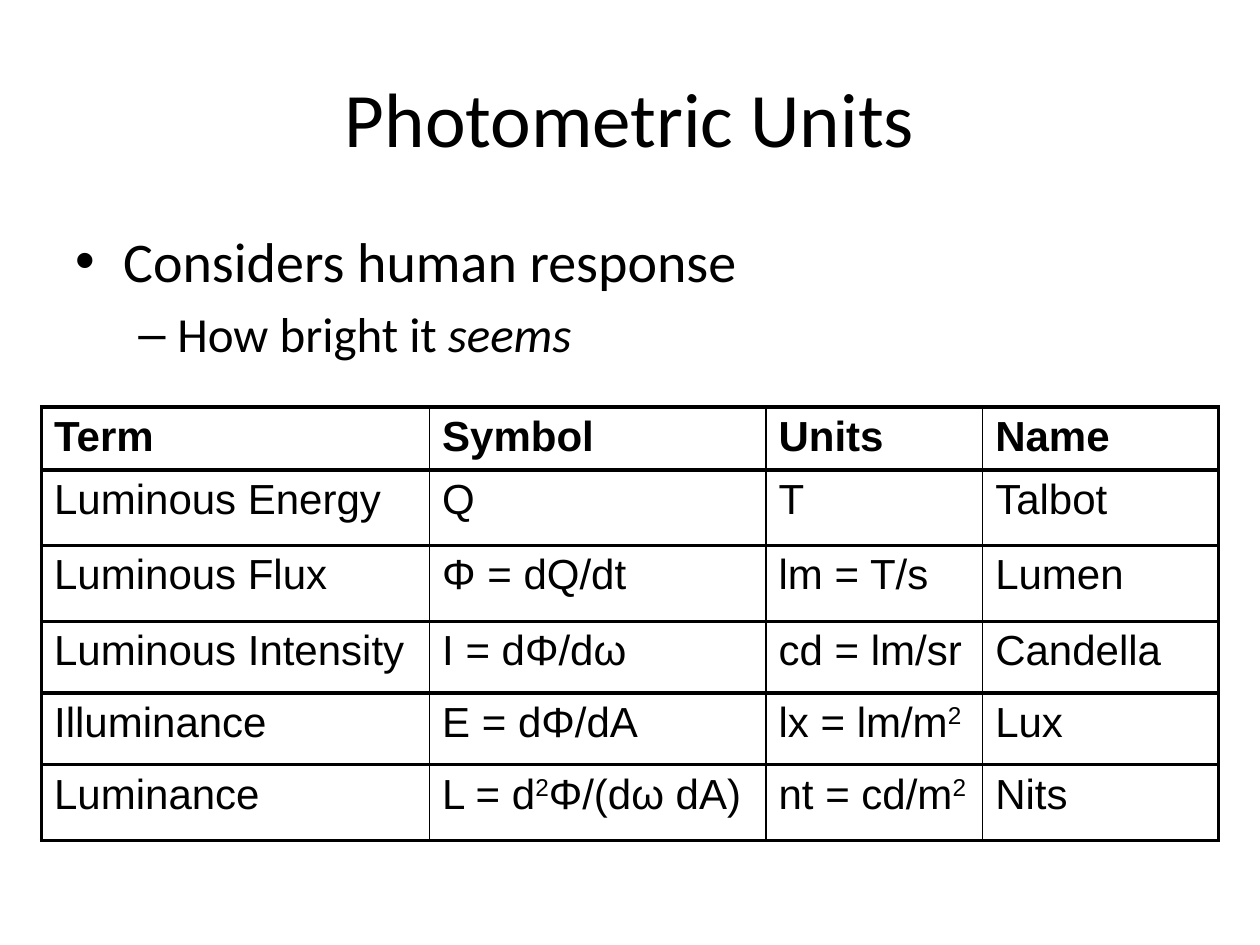
from lxml import etree
from pptx import Presentation
from pptx.dml.color import RGBColor
from pptx.enum.text import MSO_ANCHOR, PP_ALIGN
from pptx.oxml.ns import qn
from pptx.util import Inches, Pt

CENTER, MIDDLE = PP_ALIGN.CENTER, MSO_ANCHOR.MIDDLE
TITLE_ONLY = 5

# Content: *text* is italic, ^text^ is superscript
TITLE = "Photometric Units"
BULLETS = [(0, "Considers human response"), (1, "How bright it *seems*")]
UNITS = [
    ("Term", "Symbol", "Units", "Name"),
    ("Luminous Energy", "Q", "T", "Talbot"),
    ("Luminous Flux", "Φ = dQ/dt", "lm = T/s", "Lumen"),
    ("Luminous Intensity", "I = dΦ/dω", "cd = lm/sr", "Candella"),
    ("Illuminance", "E = dΦ/dA", "lx = lm/m^2^", "Lux"),
    ("Luminance", "L = d^2^Φ/(dω dA)", "nt = cd/m^2^", "Nits"),
]
COLUMN_WIDTHS = [3.08, 2.67, 1.72, 1.87]
ROW_HEIGHTS = [0.5, 0.6, 0.6, 0.57, 0.57, 0.6]

THEME = {
    "ink": "000000", "heading": "Calibri", "table": "Arial",
    "title_size": 44, "table_size": 24, "thick": 2.25, "thin": 1,
}
# Per bullet level: mark, type size, left margin, hanging indent
LEVELS = [("•", 32, 0.38, -0.38), ("–", 28, 0.81, -0.31)]


def add_runs(para, text, font_name, size, bold=False):
    """Add runs, switching style at each * or ^ mark."""
    mark = "*" if "*" in text else "^"
    for index, part in enumerate(text.split(mark)):
        if not part:
            continue
        span = para.add_run()
        span.text = part
        font = span.font
        font.name, font.size, font.bold = font_name, Pt(size), bold
        font.color.rgb = RGBColor.from_string(THEME["ink"])
        if index % 2 and mark == "*":
            font.italic = True
        elif index % 2:
            span._r.get_or_add_rPr().set("baseline", "30000")


def set_bullet(para, mark, left, indent):
    properties = para._p.get_or_add_pPr()
    properties.set("marL", str(Inches(left)))
    properties.set("indent", str(Inches(indent)))
    etree.SubElement(properties, qn("a:buFont"), typeface="Arial")
    etree.SubElement(properties, qn("a:buChar"), char=mark)


def set_borders(cell, widths):
    properties = cell._tc.get_or_add_tcPr()
    for side, width in widths.items():
        line = etree.SubElement(properties, qn(f"a:ln{side}"), w=str(Pt(width)))
        fill = etree.SubElement(line, qn("a:solidFill"))
        etree.SubElement(fill, qn("a:srgbClr"), val=THEME["ink"])


def add_title(page):
    title = page.shapes.title
    title.left, title.top = Inches(0.5), Inches(0.3)
    title.width, title.height = Inches(9), Inches(1.25)
    frame = title.text_frame
    frame.vertical_anchor = MIDDLE
    para = frame.paragraphs[0]
    para.alignment = CENTER
    add_runs(para, TITLE, THEME["heading"], THEME["title_size"])


def add_bullets(page):
    box = page.shapes.add_textbox(Inches(0.5), Inches(1.75), Inches(9), Inches(1.4))
    frame = box.text_frame
    frame.word_wrap = True
    for index, (level, text) in enumerate(BULLETS):
        mark, size, left, indent = LEVELS[level]
        para = frame.add_paragraph() if index else frame.paragraphs[0]
        para.level = level
        if index:
            para.space_before = Pt(size * 0.2)
        set_bullet(para, mark, left, indent)
        add_runs(para, text, THEME["heading"], size)


def add_units_table(page):
    table = page.shapes.add_table(
        len(UNITS), len(COLUMN_WIDTHS), Inches(0.33), Inches(3.23),
        Inches(sum(COLUMN_WIDTHS)), Inches(sum(ROW_HEIGHTS))).table
    table.first_row = table.horz_banding = False
    for column, width in zip(table.columns, COLUMN_WIDTHS):
        column.width = Inches(width)
    for row, height in zip(table.rows, ROW_HEIGHTS):
        row.height = Inches(height)

    # Thick outline and row rules, thin rules between columns
    thick, thin = THEME["thick"], THEME["thin"]
    last = len(COLUMN_WIDTHS) - 1
    for r, values in enumerate(UNITS):
        for c, text in enumerate(values):
            cell = table.cell(r, c)
            set_borders(cell, {"L": thin if c else thick,
                               "R": thin if c < last else thick,
                               "T": thick, "B": thick})
            cell.fill.background()
            add_runs(cell.text_frame.paragraphs[0], text,
                     THEME["table"], THEME["table_size"], bold=r == 0)


def main():
    deck = Presentation()
    deck.slide_width, deck.slide_height = Inches(10), Inches(7.5)
    page = deck.slides.add_slide(deck.slide_layouts[TITLE_ONLY])
    add_title(page)
    add_bullets(page)
    add_units_table(page)
    deck.save("out.pptx")


if __name__ == "__main__":
    main()
